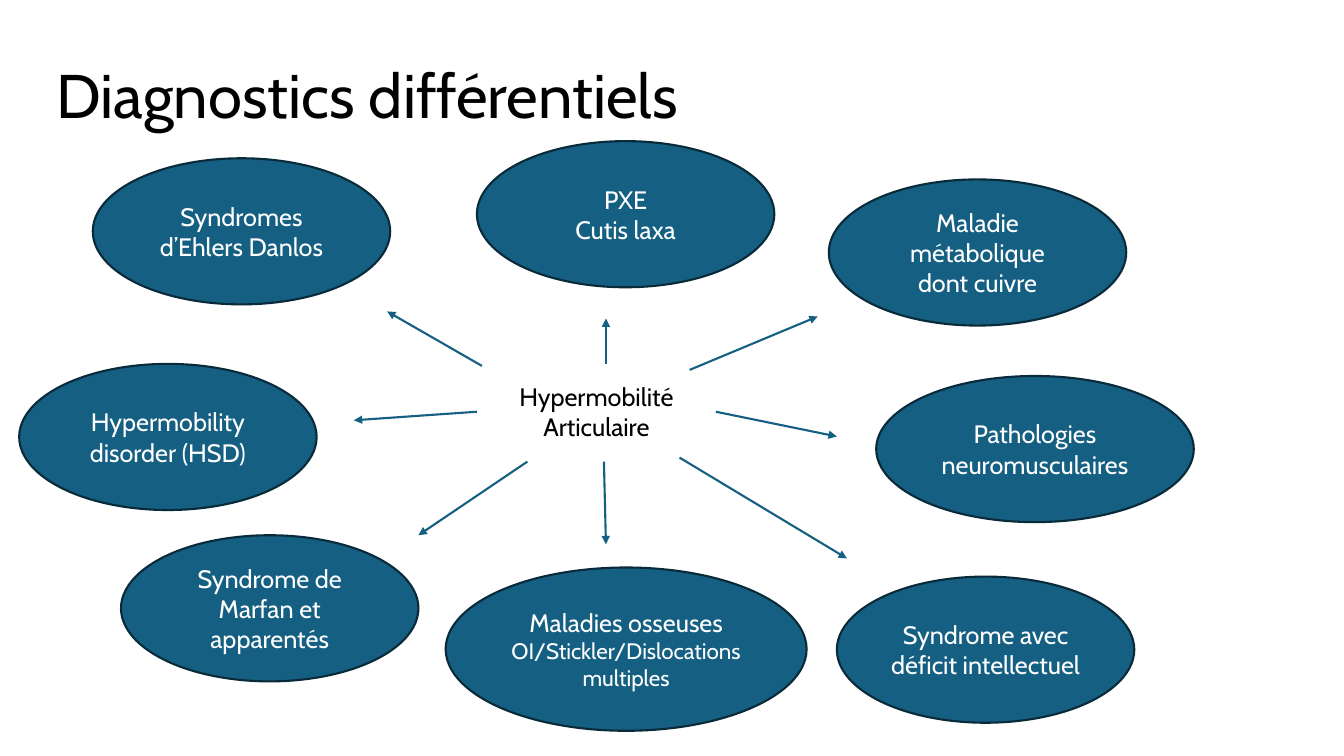
from dataclasses import dataclass

from lxml.etree import SubElement
from pptx import Presentation
from pptx.dml.color import RGBColor
from pptx.enum.shapes import MSO_CONNECTOR as Conn, MSO_SHAPE as Shape
from pptx.enum.text import MSO_ANCHOR as Anchor, PP_ALIGN as Align
from pptx.oxml.ns import qn
from pptx.shapes.autoshape import Shape as AutoShape
from pptx.slide import Slide
from pptx.util import Inches, Pt

BLUE = RGBColor(0x15, 0x60, 0x82)
NAVY = RGBColor(0x09, 0x2A, 0x39)
WHITE = RGBColor(0xFF, 0xFF, 0xFF)
BLACK = RGBColor(0, 0, 0)
FONT = "Cabin"
LEFT_SIDE, RIGHT_SIDE = 1, 3


@dataclass
class Diagnosis:
    text: str
    x: float
    y: float
    w: float = 2.95
    h: float = 1.45
    detail_size: int = 18


@dataclass
class Arrow:
    x1: float
    y1: float
    x2: float
    y2: float
    side: int | None = None


DIAGNOSES = [
    Diagnosis("Hypermobility disorder (HSD)", 0.19, 3.61),
    Diagnosis("Syndromes d’Ehlers Danlos", 0.92, 1.57),
    Diagnosis("Pathologies neuromusculaires", 8.69, 3.73, w=3.15),
    Diagnosis("Maladie métabolique dont cuivre", 8.22, 1.78),
    Diagnosis("PXE\nCutis laxa", 4.73, 1.4),
    Diagnosis("Maladies osseuses\nOI/Stickler/Dislocations multiples",
              4.42, 5.63, w=3.58, h=1.62, detail_size=16),
    Diagnosis("Syndrome de Marfan et apparentés", 1.2, 5.31),
    Diagnosis("Syndrome avec déficit intellectuel", 8.3, 5.72),
]

ARROWS = [
    Arrow(4.73, 4.08, 3.51, 4.17, LEFT_SIDE),
    Arrow(6.01, 3.61, 6.01, 3.16),
    Arrow(4.78, 3.63, 3.84, 3.09),
    Arrow(6.74, 4.54, 8.4, 5.54),
    Arrow(5.23, 4.58, 4.15, 5.31),
    Arrow(5.99, 4.58, 6.01, 5.4),
    Arrow(6.84, 3.67, 8.11, 3.14),
    Arrow(7.1, 4.08, 8.3, 4.33, RIGHT_SIDE),
]


def write(sp: AutoShape, text: str, size: int, color: RGBColor,
          align: Align, anchor: Anchor) -> None:
    tf = sp.text_frame
    tf.word_wrap = True
    tf.vertical_anchor = anchor
    tf.text = text
    for p in tf.paragraphs:
        p.alignment = align
        for r in p.runs:
            r.font.name = FONT
            r.font.size = Pt(size)
            r.font.color.rgb = color


def add_text(s: Slide, text: str, x: float, y: float, w: float, h: float,
             size: int, align: Align, anchor: Anchor) -> AutoShape:
    sp = s.shapes.add_textbox(Inches(x), Inches(y), Inches(w), Inches(h))
    write(sp, text, size, BLACK, align, anchor)
    return sp


def add_diagnosis(s: Slide, d: Diagnosis) -> None:
    sp = s.shapes.add_shape(Shape.OVAL, Inches(d.x), Inches(d.y),
                            Inches(d.w), Inches(d.h))
    sp.shadow.inherit = False
    sp.fill.solid()
    sp.fill.fore_color.rgb = BLUE
    sp.line.color.rgb = NAVY
    sp.line.width = Pt(1.5)
    write(sp, d.text, 18, WHITE, Align.CENTER, Anchor.MIDDLE)
    for p in sp.text_frame.paragraphs[1:]:
        p.runs[0].font.size = Pt(d.detail_size)


def add_arrow(s: Slide, a: Arrow, hub: AutoShape) -> None:
    line = s.shapes.add_connector(Conn.STRAIGHT, Inches(a.x1), Inches(a.y1),
                                  Inches(a.x2), Inches(a.y2))
    if a.side is not None:
        line.begin_connect(hub, a.side)
    line.line.color.rgb = BLUE
    line.line.width = Pt(1.5)
    SubElement(line.line._get_or_add_ln(), qn("a:tailEnd"), type="triangle")
    SubElement(line._element.spPr, qn("a:effectLst"))


def main() -> None:
    prs = Presentation()
    prs.slide_width, prs.slide_height = Inches(13.33), Inches(7.5)
    s = prs.slides.add_slide(prs.slide_layouts[6])
    title = add_text(s, "Diagnostics différentiels", 0.46, 0.25, 11.5, 1.45,
                     44, Align.LEFT, Anchor.MIDDLE)
    title.text_frame.paragraphs[0].line_spacing = 0.9
    for d in DIAGNOSES:
        add_diagnosis(s, d)
    hub = add_text(s, "Hypermobilité Articulaire", 4.73, 3.73, 2.37, 0.71,
                   18, Align.CENTER, Anchor.TOP)
    for a in ARROWS:
        add_arrow(s, a, hub)
    prs.save("out.pptx")


if __name__ == "__main__":
    main()
